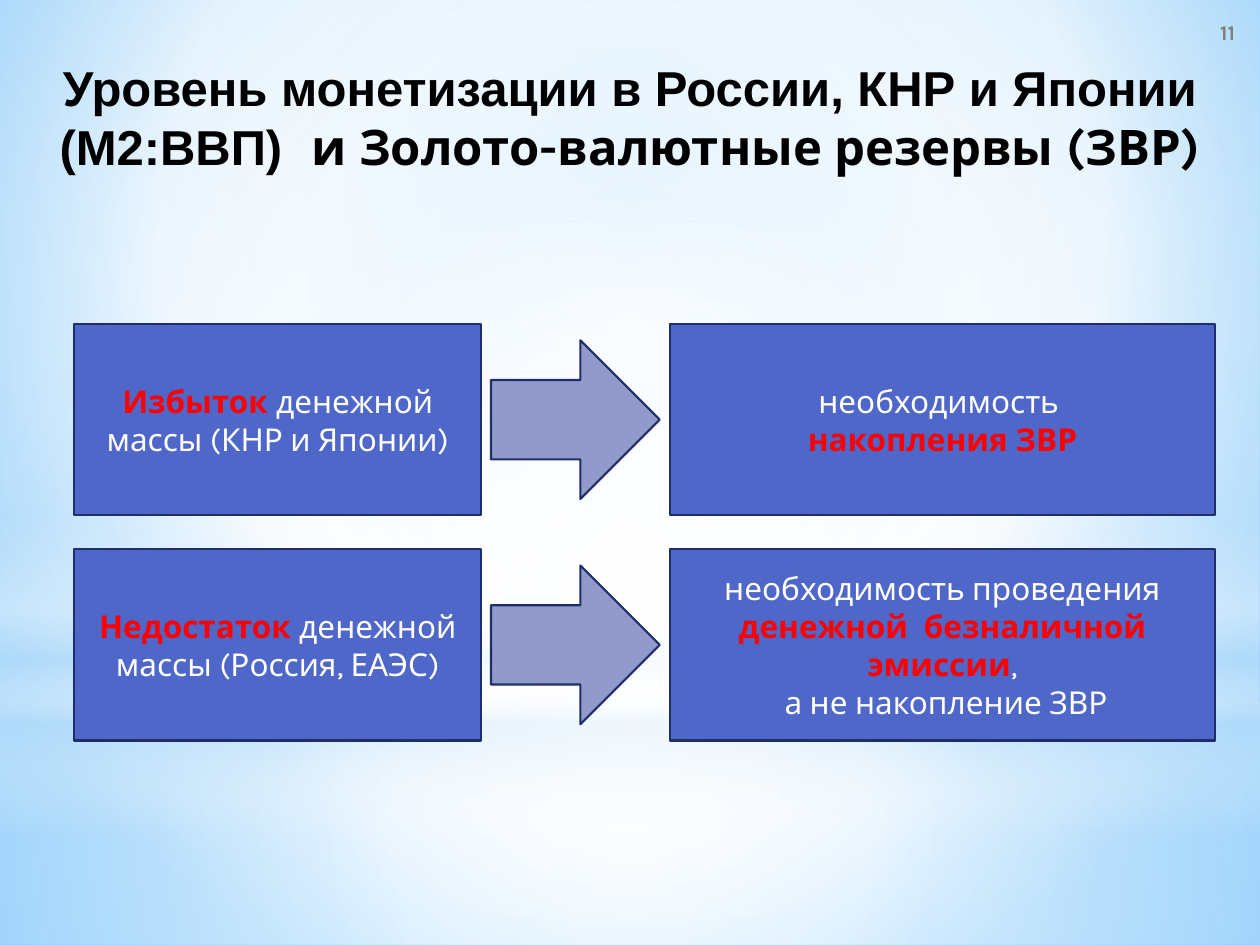
from lxml import etree
from pptx import Presentation
from pptx.dml.color import RGBColor
from pptx.enum.shapes import MSO_SHAPE
from pptx.enum.text import MSO_ANCHOR, MSO_AUTO_SIZE, PP_ALIGN
from pptx.oxml import parse_xml
from pptx.oxml.ns import qn
from pptx.util import Cm, Pt

RECT, OVAL, DOWN = MSO_SHAPE.RECTANGLE, MSO_SHAPE.OVAL, MSO_SHAPE.DOWN_ARROW
MIDDLE, TOP, CENTER = MSO_ANCHOR.MIDDLE, MSO_ANCHOR.TOP, PP_ALIGN.CENTER

COLORS = {
    "box": "4E67C8", "arrow": "919ACA", "outline": "1F2E69",
    "plain": "FFFFFF", "accent": "FF0000", "title": "000000", "number": "808080",
    "white": "FFFFFF", "haze": "B4DCFA", "sky": "9ED5FF", "deep": "5BB9FF",
}
DRAWING_NS = "http://schemas.openxmlformats.org/drawingml/2006/main"
FONT = "Karla"

# Text spans: (text, color name, bold, font)
TITLE = [[("Уровень монетизации в России, КНР и Японии (М2:ВВП)", "title", True, "Arial"),
          (" \tи Золото-валютные резервы (ЗВР)", "title", True, FONT)]]
NUMBER = [[("11", "number", True, FONT)]]


def plain(text):
    return (text, "plain", False, FONT)


def accent(text):
    return (text, "accent", True, FONT)


# Each row: cause paragraphs, consequence paragraphs
ROWS = [
    ([[accent("Избыток "), plain("денежной массы (КНР и Японии)")]],
     [[plain("необходимость ")], [accent("накопления ЗВР")]]),
    ([[accent("Недостаток "), plain("денежной массы (Россия, ЕАЭС)")]],
     [[plain("необходимость проведения")],
      [accent("денежной  безналичной эмиссии"), plain(",")],
      [plain(" а не накопление ЗВР")]]),
]

# Gradient stops: (position %, color name, opacity %)
SKY = [(0, "sky", 100), (60, "white", 100), (100, "deep", 100)]
SKY_FOCUS = (20, 10, 20, 60)
MIDPOINT = (50, 50, 50, 50)
# Backdrop: shape, top, height, stops, focus (None is a vertical linear gradient)
BACKDROP = [
    (RECT, 14.17, 4.88, [(0, "white", 91), (37, "white", 76), (100, "haze", 79)], MIDPOINT),
    (RECT, 0, 14.17, [(0, "white", 89), (48, "white", 62), (100, "haze", 79)], MIDPOINT),
    (RECT, 10.46, 6.35, [(0, "white", 0), (29, "white", 30), (45, "haze", 40),
                         (55, "white", 26), (65, "haze", 60), (100, "white", 0)], None),
    (OVAL, 4.45, 14.17, [(0, "white", 100), (56, "white", 0)], MIDPOINT),
]

PAGE_W, PAGE_H = 25.4, 19.05
CAUSE_LEFT, CAUSE_W = 1.5, 8.2
RESULT_LEFT, RESULT_W = 13.5, 11
ROW_TOP, ROW_PITCH, ROW_H = 6.53, 4.54, 3.86
ARROW_W, ARROW_H = 3.2, 3.4


def rgb(name):
    return RGBColor.from_string(COLORS[name])


def set_gradient(properties, stops, focus):
    """Replace the solid fill in the properties element with a gradient."""
    gradient = parse_xml(f'<a:gradFill xmlns:a="{DRAWING_NS}" rotWithShape="1"/>')
    stop_list = etree.SubElement(gradient, qn("a:gsLst"))
    for position, name, opacity in stops:
        stop = etree.SubElement(stop_list, qn("a:gs"), pos=str(position * 1000))
        color = etree.SubElement(stop, qn("a:srgbClr"), val=COLORS[name])
        if opacity < 100:
            etree.SubElement(color, qn("a:alpha"), val=str(opacity * 1000))
    if focus is None:
        etree.SubElement(gradient, qn("a:lin"), ang="5400000", scaled="0")
    else:
        circle = etree.SubElement(gradient, qn("a:path"))
        circle.set("path", "circle")
        sides = {side: str(share * 1000) for side, share in zip("ltrb", focus)}
        etree.SubElement(circle, qn("a:fillToRect"), **sides)
    properties.replace(properties.find(qn("a:solidFill")), gradient)


def write(shape, paragraphs, size, anchor=MIDDLE):
    frame = shape.text_frame
    frame.word_wrap = True
    frame.vertical_anchor = anchor
    for index, spans in enumerate(paragraphs):
        para = frame.add_paragraph() if index else frame.paragraphs[0]
        para.alignment = CENTER
        for text, color, bold, font in spans:
            span = para.add_run()
            span.text = text
            span.font.size = Pt(size)
            span.font.name = font
            span.font.bold = bold
            span.font.color.rgb = rgb(color)


def add_filled(page, kind, left, top, width, height, fill):
    shape = page.shapes.add_shape(kind, Cm(left), Cm(top), Cm(width), Cm(height))
    shape.shadow.inherit = False
    shape.fill.solid()
    shape.fill.fore_color.rgb = rgb(fill)
    shape.line.color.rgb = rgb("outline")
    shape.line.width = Pt(1.25)
    return shape


def add_backdrop(page):
    page.background.fill.solid()
    set_gradient(page.element.find(".//" + qn("p:bgPr")), SKY, SKY_FOCUS)
    for kind, top, height, stops, focus in BACKDROP:
        shape = add_filled(page, kind, 0, top, PAGE_W, height, "white")
        shape.line.fill.background()
        set_gradient(shape.element.spPr, stops, focus)


def add_title(page):
    title = page.shapes.title
    title.left, title.top, title.width, title.height = Cm(0.3), Cm(1.04), Cm(24.8), Cm(2.64)
    write(title, TITLE, 28, TOP)
    title.text_frame.auto_size = MSO_AUTO_SIZE.SHAPE_TO_FIT_TEXT
    page.shapes.element.append(title.element)  # in front of the backdrop


def add_row(page, top, cause, result):
    for left, width, paragraphs in ((CAUSE_LEFT, CAUSE_W, cause),
                                    (RESULT_LEFT, RESULT_W, result)):
        box = add_filled(page, RECT, left, top, width, ROW_H, "box")
        write(box, paragraphs, 18)
    gap_middle = (CAUSE_LEFT + CAUSE_W + RESULT_LEFT) / 2
    arrow = add_filled(page, DOWN, gap_middle - ARROW_W / 2, top + (ROW_H - ARROW_H) / 2,
                       ARROW_W, ARROW_H, "arrow")
    arrow.rotation = 270


def main():
    deck = Presentation()
    deck.slide_width, deck.slide_height = Cm(PAGE_W), Cm(PAGE_H)
    page = deck.slides.add_slide(deck.slide_layouts[5])
    add_backdrop(page)
    add_title(page)
    number = page.shapes.add_textbox(Cm(24.1), Cm(0), Cm(1.3), Cm(1.3))
    write(number, NUMBER, 12)
    for index, (cause, result) in enumerate(ROWS):
        add_row(page, ROW_TOP + index * ROW_PITCH, cause, result)
    deck.save("out.pptx")


if __name__ == "__main__":
    main()
